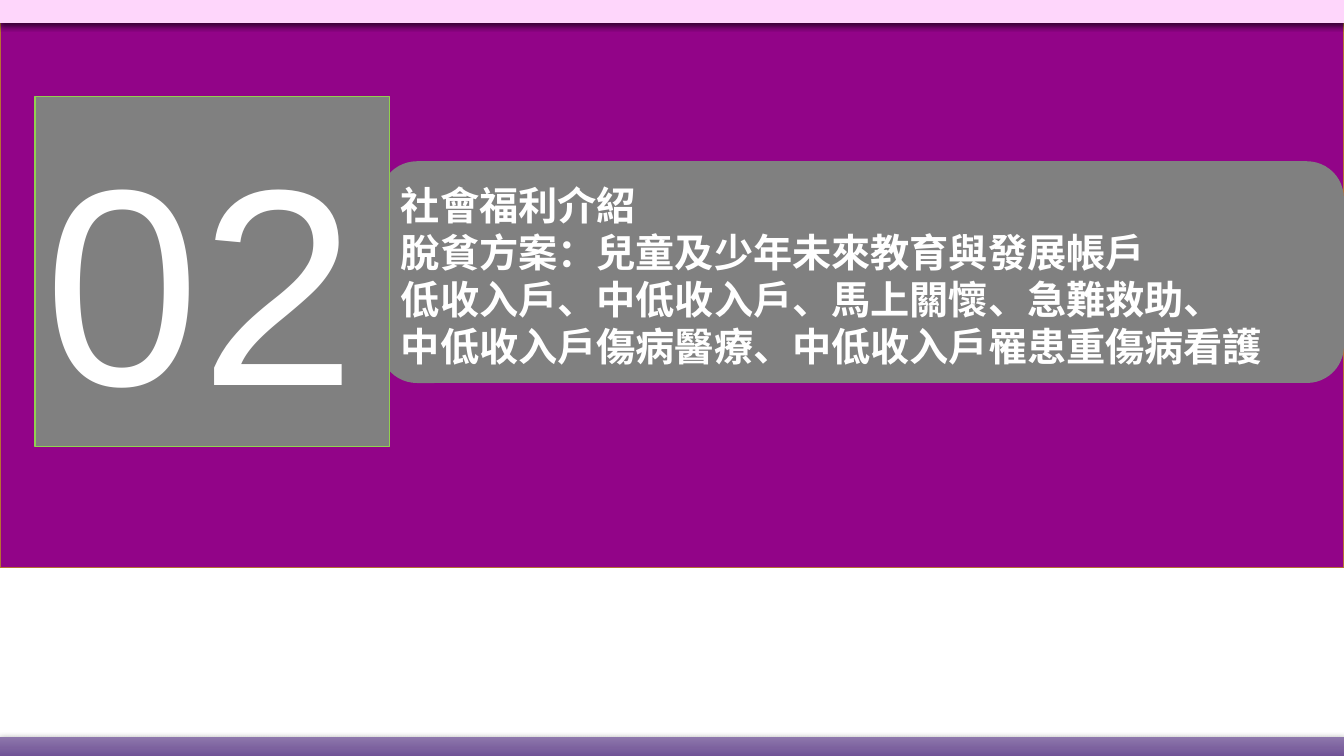
from lxml.etree import SubElement
from pptx import Presentation
from pptx.dml.color import RGBColor
from pptx.enum.shapes import MSO_SHAPE
from pptx.enum.text import MSO_ANCHOR, PP_ALIGN
from pptx.oxml.ns import qn
from pptx.util import Pt

SECTION_NUMBER = "02"
TITLE_LINES = [
    "社會福利介紹",
    "脫貧方案：兒童及少年未來教育與發展帳戶",
    "低收入戶、中低收入戶、馬上關懷、急難救助、",
    "中低收入戶傷病醫療、中低收入戶罹患重傷病看護",
]
WIDTH, HEIGHT = 960, 540
FOOTER_HEIGHT = 13.6
FOOTER_GRADIENT = ["8E78AC", "715396"]
PANEL = (271.4, 115.2, WIDTH - 271.4, 158.4)
NUMBER_BOX = (25, 69, 253.4, 250)
TITLE_INSET = 15
TITLE_DROP = 2  # balances the exact line spacing
WHITE, GREY = "FFFFFF", "808080"


def color(value):
    return RGBColor.from_string(value)


def add_block(slide, geometry, box, fill, line=None, line_width=1):
    shape = slide.shapes.add_shape(geometry, *map(Pt, box))
    shape.shadow.inherit = False
    shape.fill.solid()
    shape.fill.fore_color.rgb = color(fill)
    if line:
        shape.line.color.rgb = color(line)
        shape.line.width = Pt(line_width)
    else:
        shape.line.fill.background()
    return shape


def add_shadow(shape):
    effects = shape.element.spPr.find(qn("a:effectLst"))
    shadow = SubElement(effects, qn("a:outerShdw"), blurRad=str(Pt(4.5)),
                        dist=str(Pt(1.5)), dir="5400000", rotWithShape="0")
    black = SubElement(shadow, qn("a:srgbClr"), val="000000")
    SubElement(black, qn("a:alpha"), val="63000")


def add_run(paragraph, text, size, font_name, bold=False):
    run = paragraph.add_run()
    run.text = text
    font = run.font
    font.size, font.name, font.bold = Pt(size), font_name, bold
    font.color.rgb = color(WHITE)
    SubElement(run.font._element, qn("a:ea"), typeface=font_name)


def fill_title(slide):
    title = slide.shapes.title
    slide.shapes.element.append(title.element)  # in front of the panel
    left, top, width, height = PANEL
    title.left, title.top = Pt(left + TITLE_INSET), Pt(top + TITLE_DROP)
    title.width, title.height = Pt(width - TITLE_INSET), Pt(height)
    frame = title.text_frame
    frame.margin_left = frame.margin_right = 0
    frame.margin_top = frame.margin_bottom = 0
    frame.word_wrap = True
    frame.vertical_anchor = MSO_ANCHOR.MIDDLE
    for index, line in enumerate(TITLE_LINES):
        paragraph = frame.add_paragraph() if index else frame.paragraphs[0]
        paragraph.alignment = PP_ALIGN.LEFT
        paragraph.line_spacing = Pt(33.6)
        paragraph.space_before = Pt(0)
        add_run(paragraph, line, 28, "Noto Sans CJK SC", bold=True)


def main():
    presentation = Presentation()
    presentation.slide_width, presentation.slide_height = Pt(WIDTH), Pt(HEIGHT)
    slide = presentation.slides.add_slide(presentation.slide_layouts[5])

    add_block(slide, MSO_SHAPE.RECTANGLE, (0, 0, WIDTH, 405.4), "920488", "B76F34")
    header = add_block(slide, MSO_SHAPE.RECTANGLE, (0, 0, WIDTH, 16.4), "FED6FB")
    footer = add_block(slide, MSO_SHAPE.RECTANGLE,
                       (0, HEIGHT - FOOTER_HEIGHT, WIDTH, FOOTER_HEIGHT),
                       FOOTER_GRADIENT[0])
    footer.fill.gradient()
    footer.fill.gradient_angle = 270
    for stop, value in zip(footer.fill.gradient_stops, FOOTER_GRADIENT):
        stop.color.rgb = color(value)
    for bar in (header, footer):
        add_shadow(bar)

    add_block(slide, MSO_SHAPE.ROUNDED_RECTANGLE, PANEL, GREY)
    fill_title(slide)

    number = add_block(slide, MSO_SHAPE.RECTANGLE, NUMBER_BOX, GREY, "92D050", 0.75)
    frame = number.text_frame
    frame.word_wrap = True
    frame.vertical_anchor = MSO_ANCHOR.BOTTOM
    frame.paragraphs[0].alignment = PP_ALIGN.LEFT
    add_run(frame.paragraphs[0], SECTION_NUMBER, 200, "Arial")

    presentation.save("out.pptx")


if __name__ == "__main__":
    main()
